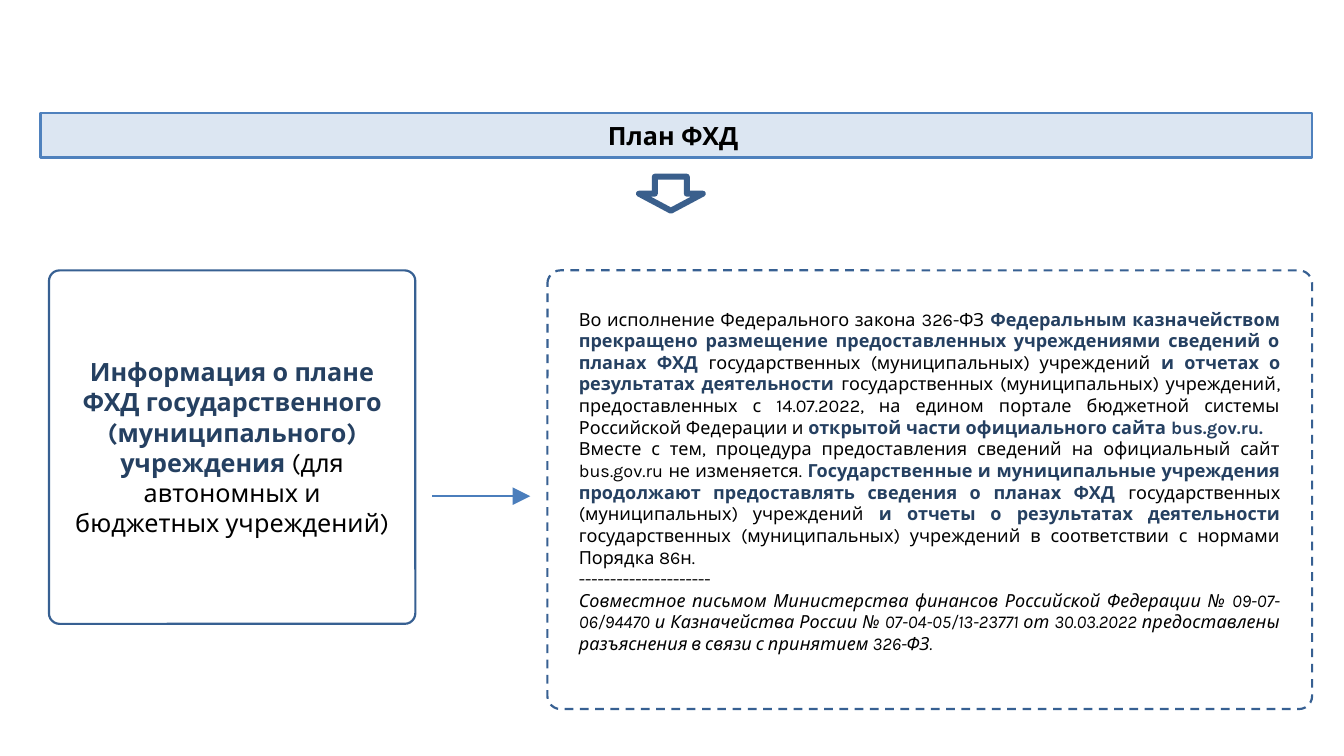
from pptx import Presentation
from pptx.dml.color import RGBColor
from pptx.enum.dml import MSO_LINE
from pptx.enum.shapes import MSO_CONNECTOR, MSO_SHAPE
from pptx.enum.text import MSO_ANCHOR, MSO_AUTO_SIZE, PP_ALIGN
from pptx.oxml.ns import qn
from pptx.util import Inches, Pt
from lxml.etree import SubElement

HUES = {"bar": "DCE6F2", "rim": "4F81BD", "down": "3A5F8C", "box": "376092",
        "link": "4B7EBC", "navy": "254061", "black": "000000"}


def style(shape, hue, width=0.75, fill=None):
    """Set the outline and the fill of a shape."""
    shape.line.color.rgb = RGBColor.from_string(HUES[hue])
    shape.line.width = Pt(width)
    if fill:
        shape.fill.solid()
        shape.fill.fore_color.rgb = RGBColor.from_string(HUES[fill])
    else:
        shape.fill.background()
    shape.shadow.inherit = False


def write(shape, paras, size):
    """Fill a shape with paragraphs of (text, hue, bold, italic) runs."""
    frame = shape.text_frame
    frame.word_wrap = True
    frame.auto_size = MSO_AUTO_SIZE.NONE
    frame.vertical_anchor = MSO_ANCHOR.MIDDLE
    for i, (align, runs) in enumerate(paras):
        para = frame.paragraphs[0] if i == 0 else frame.add_paragraph()
        para.alignment = align
        for text, hue, bold, italic in runs:
            run = para.add_run()
            run.text = text
            font = run.font
            font.name, font.size = "Karla", Pt(size)
            font.bold, font.italic = bold, italic
            font.color.rgb = RGBColor.from_string(HUES[hue])


deck = Presentation()
deck.slide_width, deck.slide_height = Inches(6.31), Inches(3.55)
slide = deck.slides.add_slide(deck.slide_layouts[5])
shapes = slide.shapes

# Title bar
title = shapes.title
title.left, title.top = Inches(0.19), Inches(0.53)
title.width, title.height = Inches(5.97), Inches(0.21)
style(title, "rim", fill="bar")
write(title, [(PP_ALIGN.CENTER, [("План ФХД ", "black", True, False)])], 8.5)

# Arrow below the title
down = shapes.add_shape(MSO_SHAPE.DOWN_ARROW, Inches(3), Inches(0.83),
                        Inches(0.3), Inches(0.16))
style(down, "down", 2)

# Left box: the subject
topic = [(PP_ALIGN.CENTER, [
    ("Информация о плане ФХД государственного (муниципального) учреждения ",
     "navy", True, False),
    ("(для автономных и бюджетных учреждений)", "black", False, False),
])]

# Right box: the explanation
notice = [
    (PP_ALIGN.JUSTIFY, [
        ("Во исполнение Федерального закона 326-ФЗ ", "black", False, False),
        ("Федеральным казначейством прекращено размещение предоставленных "
         "учреждениями сведений о планах ФХД ", "navy", True, False),
        ("государственных (муниципальных) учреждений ", "black", False, False),
        ("и отчетах о результатах деятельности ", "navy", True, False),
        ("государственных (муниципальных) учреждений, предоставленных "
         "с 14.07.2022, на едином портале бюджетной системы Российской "
         "Федерации и ", "black", False, False),
        ("открытой части официального сайта bus.gov.ru.", "navy", True, False),
    ]),
    (PP_ALIGN.JUSTIFY, [
        ("Вместе с тем, процедура предоставления сведений на официальный сайт "
         "bus.gov.ru не изменяется. ", "black", False, False),
        ("Государственные и муниципальные учреждения продолжают предоставлять "
         "сведения о планах ФХД ", "navy", True, False),
        ("государственных (муниципальных) учреждений ", "black", False, False),
        ("и отчеты о результатах деятельности", "navy", True, False),
        (" государственных (муниципальных) учреждений в соответствии "
         "с нормами Порядка 86н.", "black", False, False),
    ]),
    (PP_ALIGN.LEFT, [("---------------------", "black", False, False)]),
    (PP_ALIGN.JUSTIFY, [
        ("Совместное письмом Министерства финансов Российской Федерации "
         "№ 09-07-06/94470 и Казначейства России № 07-04-05/13-23771 "
         "от 30.03.2022 предоставлены разъяснения в связи с принятием 326-ФЗ.",
         "black", False, True),
    ]),
]

# Both boxes share their top edge
for left, width, height, dash, paras, size, side, foot in (
        (0.23, 1.72, 1.66, MSO_LINE.SOLID, topic, 8.5, 0.1, 0.05),
        (2.57, 3.59, 2.06, MSO_LINE.DASH, notice, 6.1, 0.13, 0.13)):
    box = shapes.add_shape(MSO_SHAPE.ROUNDED_RECTANGLE, Inches(left),
                           Inches(1.27), Inches(width), Inches(height))
    box.adjustments[0] = 0.03
    style(box, "box")
    box.line.dash_style = dash
    frame = box.text_frame
    frame.margin_left = frame.margin_right = Inches(side)
    frame.margin_top, frame.margin_bottom = Inches(0.05), Inches(foot)
    write(box, paras, size)

# Arrow between the boxes
link = shapes.add_connector(MSO_CONNECTOR.STRAIGHT, Inches(2.03), Inches(2.33),
                            Inches(2.49), Inches(2.33))
link.line.color.rgb = RGBColor.from_string(HUES["link"])
link.line.width = Pt(0.75)
# The line element is already there once its colour is set
SubElement(link._element.spPr.find(qn("a:ln")), qn("a:tailEnd"),
           type="triangle")
SubElement(link._element.spPr, qn("a:effectLst"))

deck.save("out.pptx")
